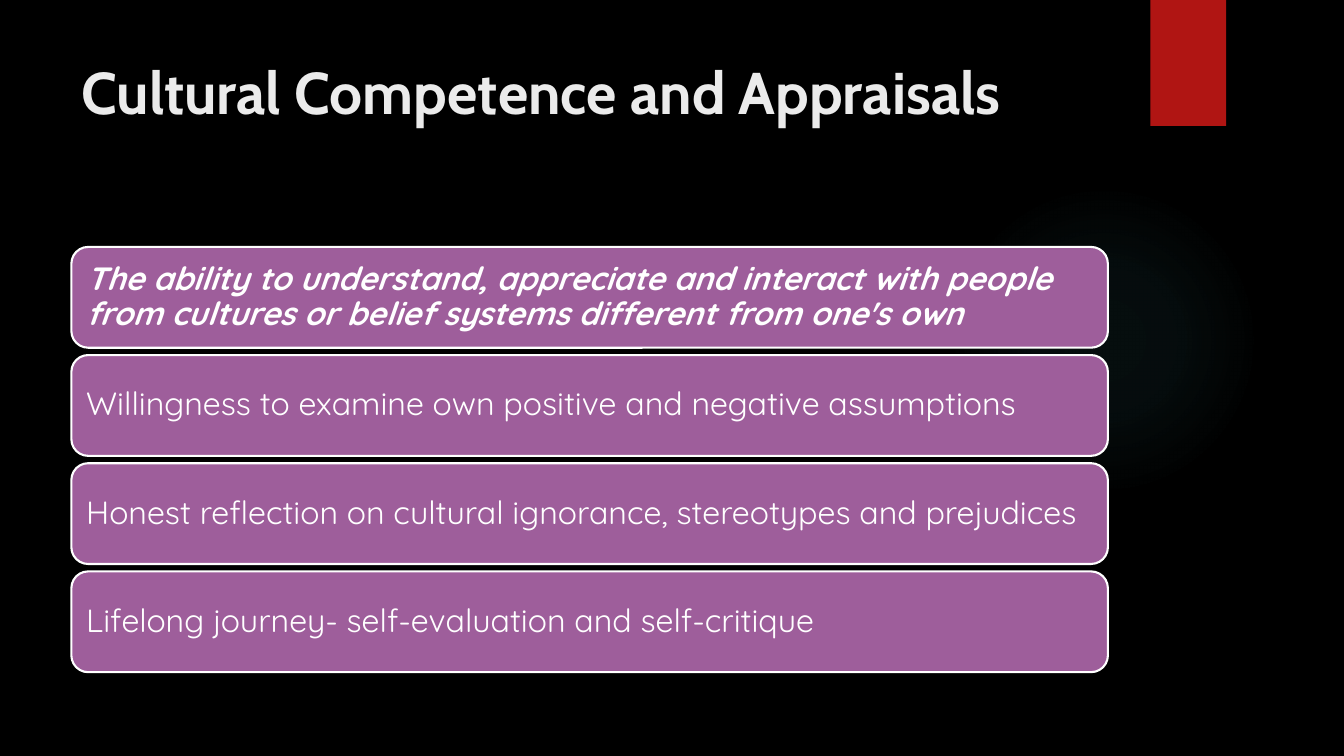
"""Build the slide on cultural competence and appraisals."""
from pptx import Presentation
from pptx.dml.color import RGBColor
from pptx.enum.shapes import MSO_SHAPE as Preset
from pptx.enum.text import MSO_ANCHOR as Anchor, MSO_AUTO_SIZE as AutoSize, PP_ALIGN as Align
from pptx.oxml import parse_xml
from pptx.oxml.ns import nsdecls, qn
from pptx.util import Pt

TITLE = "Cultural Competence and Appraisals"
STATEMENTS = [
    "The ability to understand, appreciate and interact with people "
    "from cultures or belief systems different from one's own",
    "Willingness to examine own positive and negative assumptions",
    "Honest reflection on cultural ignorance, stereotypes and prejudices",
    "Lifelong journey- self-evaluation and self-critique",
]
BAR_TOP, BAR_PITCH, BAR_HEIGHT = 176.4, 77.25, 72


def colour(value):
    """Turn a hex string into a colour."""
    return RGBColor.from_string(value)


def assign(target, values):
    """Set each attribute of the target from a dict."""
    for name, value in values.items():
        setattr(target, name, value)


class Page:
    """Hold the slide and its style, and draw each kind of element."""

    title_font = {"name": "Cabin", "size": Pt(42), "bold": True}
    bar_font = {"name": "Quicksand", "size": Pt(23)}
    title_frame = {"word_wrap": True, "auto_size": AutoSize.NONE, "vertical_anchor": Anchor.TOP}
    bar_frame = {"word_wrap": True, "vertical_anchor": Anchor.MIDDLE,
                 "margin_left": Pt(7.2), "margin_right": Pt(7.2),
                 "margin_top": Pt(7.2), "margin_bottom": Pt(7.2)}

    def __init__(self, deck, background):
        """Add a title-only slide with a plain background."""
        self.slide = deck.slides.add_slide(deck.slide_layouts[5])
        fill = self.slide.background.fill
        fill.solid()
        fill.fore_color.rgb = colour(background)

    def shape(self, preset, left, top, width, height, fill):
        """Add a filled shape without outline or shadow."""
        shape = self.slide.shapes.add_shape(preset, Pt(left), Pt(top), Pt(width), Pt(height))
        shape.shadow.inherit = False
        shape.fill.solid()
        shape.fill.fore_color.rgb = colour(fill)
        shape.line.fill.background()
        return shape

    def glow(self, left, top, size, tint, stops):
        """Add a circle that fades outwards through (position, opacity) stops."""
        circle = self.shape(Preset.OVAL, left, top, size, size, tint)
        steps = "".join(
            f'<a:gs pos="{position * 1000}"><a:srgbClr val="{tint}">'
            f'<a:alpha val="{opacity * 1000}"/></a:srgbClr></a:gs>'
            for position, opacity in stops)
        gradient = parse_xml(
            f'<a:gradFill {nsdecls("a")} rotWithShape="1"><a:gsLst>{steps}</a:gsLst>'
            '<a:path path="circle"><a:fillToRect l="50000" t="50000" r="50000" b="50000"/>'
            '</a:path></a:gradFill>')
        properties = circle.element.spPr
        properties.replace(properties.find(qn("a:solidFill")), gradient)

    def fill_text(self, frame, text, layout, font, ink, spacing=1.0):
        """Put one left-aligned paragraph into a text frame."""
        assign(frame, layout)
        para = frame.paragraphs[0]
        assign(para, {"alignment": Align.LEFT, "line_spacing": spacing})
        span = para.add_run()
        span.text = text
        assign(span.font, font)
        span.font.color.rgb = colour(ink)

    def title(self, text, left, top, width, height):
        """Place and fill the title placeholder."""
        box = self.slide.shapes.title
        assign(box, {"left": Pt(left), "top": Pt(top), "width": Pt(width), "height": Pt(height)})
        self.fill_text(box.text_frame, text, self.title_frame, self.title_font, "EBEBEB")

    def bar(self, text, left, top, width, height, strong):
        """Add a rounded bar that carries one statement."""
        box = self.shape(Preset.ROUNDED_RECTANGLE, left, top, width, height, "9E5E9B")
        box.line.color.rgb = colour("FFFFFF")
        box.line.width = Pt(1.5)
        font = {**self.bar_font, "bold": strong, "italic": strong}
        self.fill_text(box.text_frame, text, self.bar_frame, font, "FFFFFF", 0.9)


def main():
    """Build and save the deck."""
    deck = Presentation()
    assign(deck, {"slide_width": Pt(960), "slide_height": Pt(540)})
    page = Page(deck, "000000")
    page.glow(677.5, 131.8, 221.8, "50B9C1", [(0, 7), (36, 6), (69, 0), (100, 0)])
    page.shape(Preset.RECTANGLE, 821.8, 0, 54, 90, "B01513")
    page.title(TITLE, 51, 36, 741, 110)
    for index, statement in enumerate(STATEMENTS):
        page.bar(statement, 51, BAR_TOP + index * BAR_PITCH, 740.4, BAR_HEIGHT, index == 0)
    deck.save("out.pptx")


if __name__ == "__main__":
    main()
